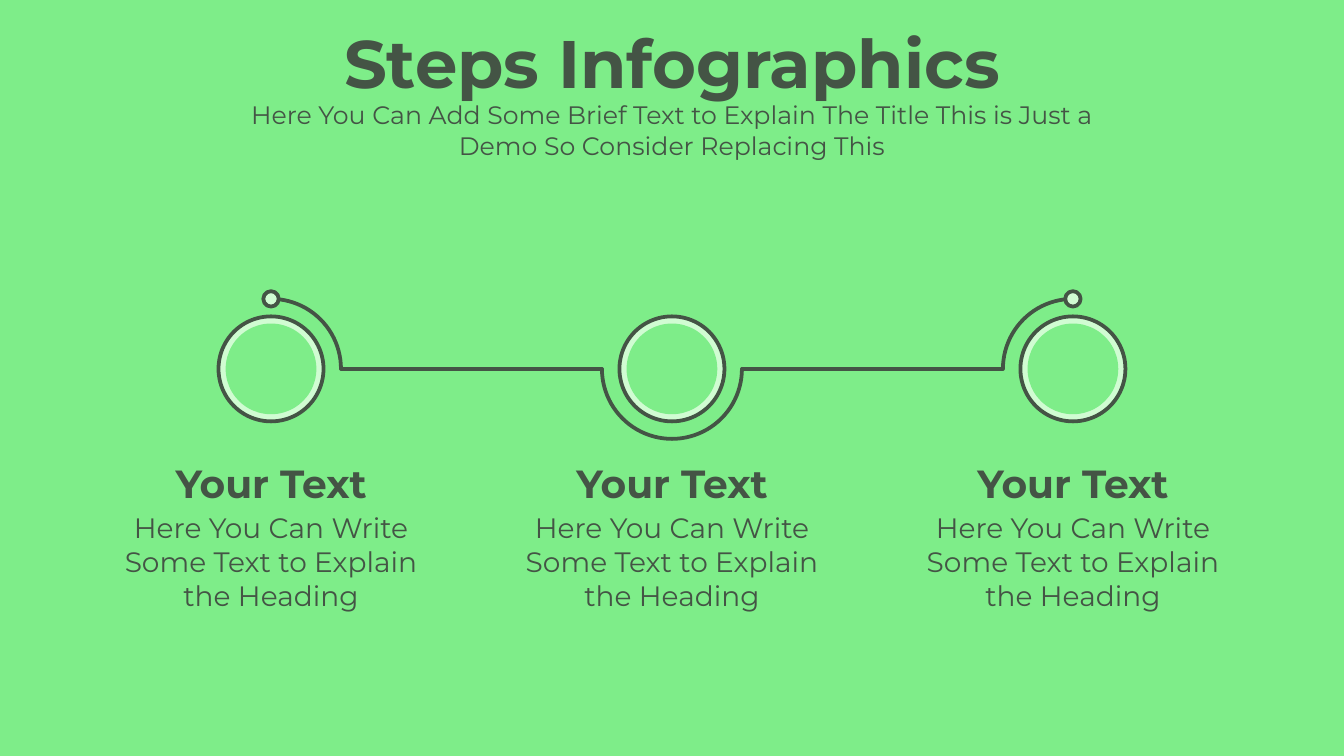
from lxml import etree
from pptx import Presentation
from pptx.dml.color import RGBColor
from pptx.enum.shapes import MSO_CONNECTOR, MSO_SHAPE
from pptx.enum.text import MSO_AUTO_SIZE, PP_ALIGN
from pptx.oxml.ns import qn
from pptx.util import Pt

BACKGROUND = "7EED89"
DARK = "445445"
PALE = "D0FCD2"

CENTRE_X = 480
STEP_GAP = 286.4
CENTRE_Y = 263.5
ARC_RADIUS = 50
LINE_WIDTH = 2.7


def colour(value):
    return RGBColor.from_string(value)


def style_line(shape):
    """Give a shape or connector the dark, round-ended stroke."""
    shape.line.color.rgb = colour(DARK)
    shape.line.width = Pt(LINE_WIDTH)
    shape.line._get_or_add_ln().set("cap", "rnd")


def add_round_shape(slide, kind, x, y, radius):
    """Add a shape whose box is a square centred on x, y."""
    shape = slide.shapes.add_shape(
        kind, Pt(x - radius), Pt(y - radius), Pt(2 * radius), Pt(2 * radius))
    shape.shadow.inherit = False
    return shape


def add_circle(slide, x, y, radius, fill, outlined=True):
    circle = add_round_shape(slide, MSO_SHAPE.OVAL, x, y, radius)
    circle.fill.solid()
    circle.fill.fore_color.rgb = colour(fill)
    if outlined:
        style_line(circle)
    else:
        circle.line.fill.background()


def add_arc(slide, x, start, end):
    """Add an arc around a step, clockwise between two angles in degrees."""
    arc = add_round_shape(slide, MSO_SHAPE.ARC, x, CENTRE_Y, ARC_RADIUS)
    # One degree is 60000 units, and adjustments count in 100000 units.
    arc.adjustments[0] = start * 0.6
    arc.adjustments[1] = end * 0.6
    arc.fill.background()
    style_line(arc)


def add_link(slide, left, right):
    link = slide.shapes.add_connector(
        MSO_CONNECTOR.STRAIGHT, Pt(left), Pt(CENTRE_Y), Pt(right), Pt(CENTRE_Y))
    style_line(link)
    etree.SubElement(link._element.spPr, qn("a:effectLst"))


def add_text(slide, text, x, top, width, height, size, bold=False):
    """Add a text box centred on x, with one paragraph per line of text."""
    box = slide.shapes.add_textbox(
        Pt(x - width / 2), Pt(top), Pt(width), Pt(height))
    frame = box.text_frame
    frame.word_wrap = True
    frame.auto_size = MSO_AUTO_SIZE.SHAPE_TO_FIT_TEXT
    frame.text = text
    for paragraph in frame.paragraphs:
        paragraph.alignment = PP_ALIGN.CENTER
        for run in paragraph.runs:
            run.font.name = "Montserrat"
            run.font.size = Pt(size)
            run.font.bold = bold
            run.font.color.rgb = colour(DARK)


def add_step(slide, x):
    add_circle(slide, x, CENTRE_Y, 37.5, PALE)
    add_circle(slide, x, CENTRE_Y, 32.4, BACKGROUND, outlined=False)
    add_text(slide, "Your Text", x, 324.7, 198, 41, 28, bold=True)
    add_text(slide, "Here You Can Write\nSome Text to Explain\nthe Heading",
             x, 361.4, 238.3, 80, 20)


def main():
    presentation = Presentation()
    presentation.slide_width = Pt(960)
    presentation.slide_height = Pt(540)
    slide = presentation.slides.add_slide(presentation.slide_layouts[6])
    slide.background.fill.solid()
    slide.background.fill.fore_color.rgb = colour(BACKGROUND)

    add_text(slide, "Steps Infographics", CENTRE_X, 11.5, 560, 65.5, 48, bold=True)
    add_text(slide, "Here You Can Add Some Brief Text to Explain The Title "
             "This is Just a Demo So Consider Replacing This",
             CENTRE_X, 67.7, 628.6, 51, 18)

    steps = [CENTRE_X + STEP_GAP * index for index in (-1, 0, 1)]
    for x, (start, end) in zip(steps, [(270, 0), (0, 180), (180, 270)]):
        add_step(slide, x)
        add_arc(slide, x, start, end)
    for left, right in zip(steps, steps[1:]):
        add_link(slide, left + ARC_RADIUS, right - ARC_RADIUS)
    for x in (steps[0], steps[-1]):
        add_circle(slide, x, CENTRE_Y - ARC_RADIUS, 5.5, PALE)

    presentation.save("out.pptx")


if __name__ == "__main__":
    main()
